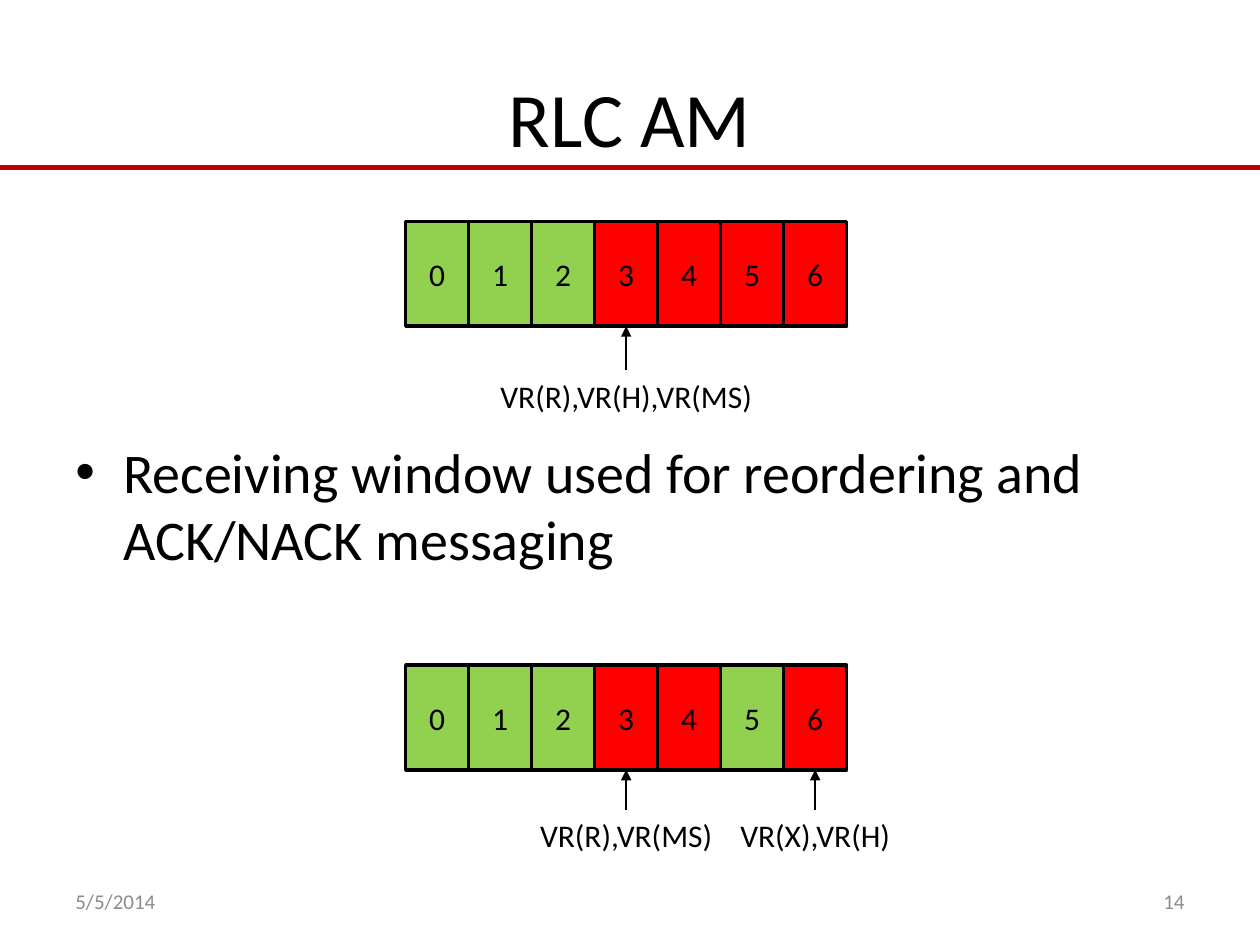
from pptx import Presentation
from pptx.dml.color import RGBColor
from pptx.enum.shapes import MSO_CONNECTOR, MSO_SHAPE
from pptx.enum.text import MSO_ANCHOR, PP_ALIGN
from pptx.oxml.ns import qn
from pptx.util import Inches, Pt

LEFT, CENTER, RIGHT = PP_ALIGN.LEFT, PP_ALIGN.CENTER, PP_ALIGN.RIGHT
TOP, MIDDLE = MSO_ANCHOR.TOP, MSO_ANCHOR.MIDDLE
RECT, STRAIGHT = MSO_SHAPE.RECTANGLE, MSO_CONNECTOR.STRAIGHT

BLACK, GRAY, CRIMSON = "000000", "8C8C8C", "C00000"
GREEN, RED = "92D050", "FF0000"
WIDE, HIGH = 10, 7.5
EDGE = WIDE / 20
FULL = WIDE - 2 * EDGE
FOOT = FULL * 0.26
CELL_W, CELL_H, ROW_X = 0.5, 0.83, 3.22
LABEL_H = 0.4

TITLE = "RLC AM"
POINT = "Receiving window used for reordering and ACK/NACK messaging"
DATE, PAGE = "5/5/2014", "14"
WINDOWS = [
    {"top": 1.76, "got": {0, 1, 2}, "gap": 0.35,
     "marks": [(3, "VR(R),VR(H),VR(MS)", 2.22)]},
    {"top": 5.28, "got": {0, 1, 2, 5}, "gap": 0.32,
     "marks": [(3, "VR(R),VR(MS)", 1.58), (6, "VR(X),VR(H)", 1.41)]},
]
CELLS = 7


def color(code):
    return RGBColor.from_string(code)


def box(at):
    return [Inches(n) for n in at]


def write(shape, text, size, ink=BLACK, align=LEFT, anchor=TOP, wrap=True):
    frame = shape.text_frame
    frame.text = text
    frame.word_wrap = wrap
    frame.vertical_anchor = anchor
    para = frame.paragraphs[0]
    para.alignment = align
    font = para.runs[0].font
    font.name, font.size = "Calibri", Pt(size)
    font.color.rgb = color(ink)
    return para


def note(slide, at, *args, **style):
    return write(slide.shapes.add_textbox(*box(at)), *args, **style)


def rule(slide, start, end, ink, width):
    line = slide.shapes.add_connector(STRAIGHT, *box(start + end))
    line.line.color.rgb = color(ink)
    line.line.width = Pt(width)
    props = line._element.spPr
    props.append(props.makeelement(qn("a:effectLst"), {}))
    return line


def bullet(para):
    props = para._p.get_or_add_pPr()
    props.set("marL", str(Inches(0.38)))
    props.set("indent", str(-Inches(0.38)))
    for tag, key, value in (("a:buFont", "typeface", "Arial"), ("a:buChar", "char", "•")):
        props.append(props.makeelement(qn(tag), {key: value}))


def cell(slide, left, top, text, fill):
    shape = slide.shapes.add_shape(RECT, *box((left, top, CELL_W, CELL_H)))
    shape.shadow.inherit = False
    shape.fill.solid()
    shape.fill.fore_color.rgb = color(fill)
    shape.line.color.rgb = color(BLACK)
    shape.line.width = Pt(2)
    write(shape, text, 18, align=CENTER, anchor=MIDDLE)
    return shape


def window(slide, top, got, gap, marks):
    cells = [cell(slide, ROW_X + i * CELL_W, top, str(i), GREEN if i in got else RED)
             for i in range(CELLS)]
    base = top + CELL_H
    for i, text, width in marks:
        mid = ROW_X + (i + 0.5) * CELL_W
        note(slide, (mid - width / 2, base + gap, width, LABEL_H), text, 18,
             align=CENTER, wrap=False)
        arrow = rule(slide, (mid, base + gap), (mid, base), BLACK, 1.5)
        arrow.end_connect(cells[i], 2)
        line = arrow.line._get_or_add_ln()
        line.append(line.makeelement(qn("a:tailEnd"), {"type": "triangle"}))


def main():
    """Build the slide on the RLC AM receiving window."""
    deck = Presentation()
    deck.slide_width, deck.slide_height = Inches(WIDE), Inches(HIGH)
    slide = deck.slides.add_slide(deck.slide_layouts[5])

    rule(slide, (0, 1.33), (WIDE, 1.33), CRIMSON, 3.25)

    title = slide.shapes.title
    title.left, title.top, title.width, title.height = box((EDGE, 0.3, FULL, 1.25))
    write(title, TITLE, 44, align=CENTER, anchor=MIDDLE)

    bullet(note(slide, (EDGE, 3.42, FULL, 1.58), POINT, 32))
    for left, text, align in ((EDGE, DATE, LEFT), (WIDE - EDGE - FOOT, PAGE, RIGHT)):
        note(slide, (left, 6.95, FOOT, 0.4), text, 12, GRAY, align, MIDDLE)
    for item in WINDOWS:
        window(slide, **item)
    deck.save("out.pptx")


if __name__ == "__main__":
    main()
